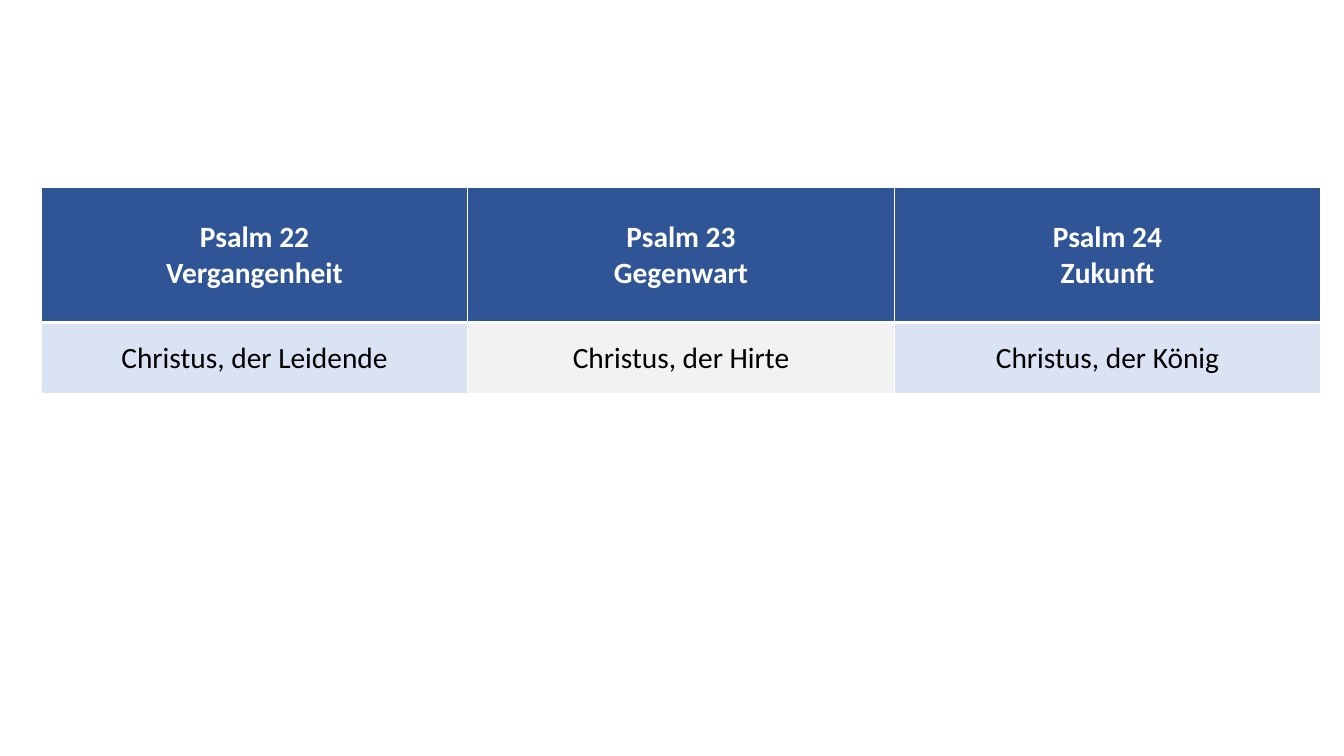
from dataclasses import dataclass

from lxml import etree
from pptx import Presentation
from pptx.dml.color import RGBColor
from pptx.enum import text
from pptx.oxml import ns
from pptx.table import _Cell
from pptx.util import Inches, Pt

WHITE, BLACK = "FFFFFF", "000000"
BLUE, PALE_BLUE, PALE_GREY = "2F5597", "DAE3F3", "F2F2F2"
COLUMN_WIDTH = 4.23
HEADER_HEIGHT, BODY_HEIGHT = 1.34, 0.71
THIN, THICK = 1, 3


@dataclass
class Psalm:
    heading: str
    theme: str
    fill: str


PSALMS = [
    Psalm("Psalm 22\nVergangenheit", "Christus, der Leidende", PALE_BLUE),
    Psalm("Psalm 23\nGegenwart", "Christus, der Hirte", PALE_GREY),
    Psalm("Psalm 24\nZukunft", "Christus, der König", PALE_BLUE),
]


def rgb(value: str) -> RGBColor:
    return RGBColor.from_string(value)


def add_borders(cell: _Cell, top: float, bottom: float) -> None:
    """Give the cell white borders, thin at the sides."""
    properties = cell._tc.get_or_add_tcPr()
    widths = {"lnL": THIN, "lnR": THIN, "lnT": top, "lnB": bottom}
    for side, width in widths.items():
        line = etree.SubElement(properties, ns.qn(f"a:{side}"), w=str(Pt(width)))
        fill = etree.SubElement(line, ns.qn("a:solidFill"))
        etree.SubElement(fill, ns.qn("a:srgbClr"), val=WHITE)


def format_cell(cell: _Cell, words: str, fill: str, color: str, bold: bool) -> None:
    cell.fill.solid()
    cell.fill.fore_color.rgb = rgb(fill)
    cell.vertical_anchor = text.MSO_ANCHOR.MIDDLE
    cell.margin_left = cell.margin_right = Inches(0.14)
    cell.margin_top = cell.margin_bottom = 0
    cell.text_frame.text = words
    for para in cell.text_frame.paragraphs:
        para.alignment = text.PP_ALIGN.CENTER
        para.font.name = "Calibri"
        para.font.size = Pt(21)
        para.font.bold = bold
        para.font.color.rgb = rgb(color)


def main() -> None:
    deck = Presentation()
    deck.slide_width, deck.slide_height = Inches(13.33), Inches(7.5)
    page = deck.slides.add_slide(deck.slide_layouts[6])

    table = page.shapes.add_table(
        2, len(PSALMS), Inches(0.41), Inches(1.86),
        Inches(COLUMN_WIDTH * len(PSALMS)), Inches(HEADER_HEIGHT + BODY_HEIGHT),
    ).table
    table.rows[0].height = Inches(HEADER_HEIGHT)
    table.rows[1].height = Inches(BODY_HEIGHT)

    for index, psalm in enumerate(PSALMS):
        table.columns[index].width = Inches(COLUMN_WIDTH)
        header, body = table.cell(0, index), table.cell(1, index)
        add_borders(header, THIN, THICK)
        add_borders(body, THICK, THIN)
        format_cell(header, psalm.heading, BLUE, WHITE, True)
        format_cell(body, psalm.theme, psalm.fill, BLACK, False)

    deck.save("out.pptx")


if __name__ == "__main__":
    main()
